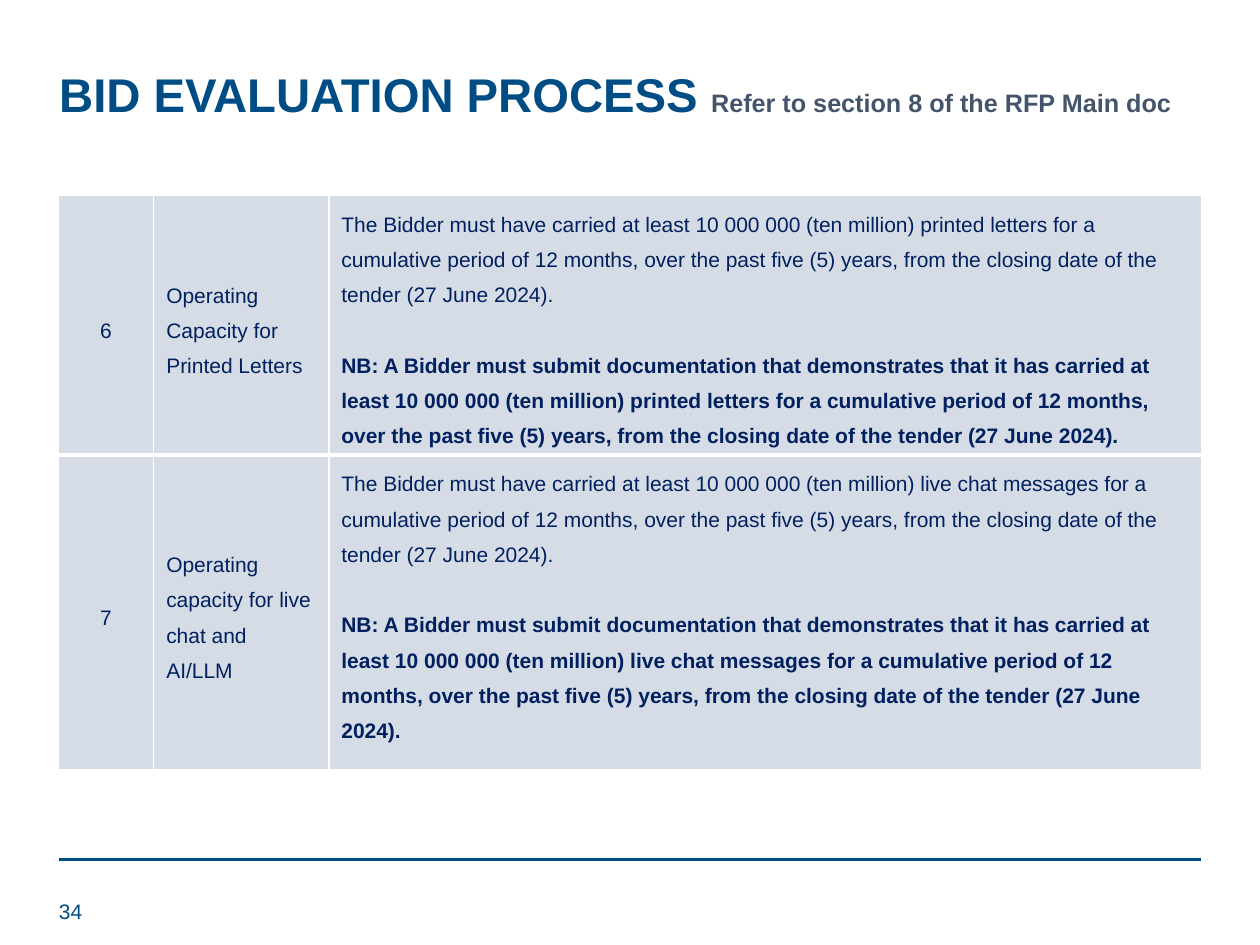
from dataclasses import dataclass

from lxml import etree
from pptx import Presentation
from pptx.dml.color import RGBColor
from pptx.enum.shapes import MSO_CONNECTOR
from pptx.enum.text import MSO_ANCHOR, PP_ALIGN
from pptx.oxml.ns import qn
from pptx.util import Inches, Pt

LEFT, CENTER = PP_ALIGN.LEFT, PP_ALIGN.CENTER
TOP, MIDDLE = MSO_ANCHOR.TOP, MSO_ANCHOR.MIDDLE
STRAIGHT = MSO_CONNECTOR.STRAIGHT
TITLE_ONLY = 5


@dataclass(frozen=True)
class Theme:
    font: str = "Arial"
    brand: str = "004C85"
    note: str = "44546A"
    ink: str = "002060"
    cell: str = "D6DCE5"
    edge: str = "FFFFFF"
    head: float = 27
    sub: float = 14.4
    body: float = 12


THEME = Theme()
COLS = (0.76, 1.39, 6.93)
ROWS = (2.06, 2.5)
LINES = 1.5
GAP = Pt(20.1)  # one body line between the rule and its note

ITEMS = (
    ("6", "Operating Capacity for Printed Letters", "printed letters"),
    ("7", "Operating capacity for live chat and AI/LLM", "live chat messages"),
)
TERMS = ("at least 10 000 000 (ten million) {} for a cumulative period of "
         "12 months, over the past five (5) years, from the closing date of "
         "the tender (27 June 2024).")
RULE = "The Bidder must have carried " + TERMS
PROOF = ("NB: A Bidder must submit documentation that demonstrates that it "
         "has carried " + TERMS)


def style(font, size, color, bold=False):
    font.name, font.size, font.bold = THEME.font, Pt(size), bold
    font.color.rgb = RGBColor.from_string(color)


def add_title(slide, box, head, sub):
    title = slide.shapes.title
    title.left, title.top, title.width, title.height = box
    frame = title.text_frame
    frame.vertical_anchor = MIDDLE
    line = frame.paragraphs[0]
    line.alignment, line.line_spacing = LEFT, 0.9
    for text, size, color in ((head, THEME.head, THEME.brand),
                              (sub, THEME.sub, THEME.note)):
        run = line.add_run()
        run.text = text
        style(run.font, size, color, True)


def set_edges(cell, base):
    props = cell._tc.get_or_add_tcPr()
    widths = {"a:lnL": 1, "a:lnR": 1, "a:lnT": 1, "a:lnB": base}
    for spot, (tag, width) in enumerate(widths.items()):
        edge = etree.Element(qn(tag), w=str(Pt(width)))
        fill = etree.SubElement(edge, qn("a:solidFill"))
        etree.SubElement(fill, qn("a:srgbClr"), val=THEME.edge)
        props.insert(spot, edge)


def fill_cell(cell, texts, align, anchor, base):
    """Write the texts as paragraphs, each after the first one bold."""
    cell.fill.solid()
    cell.fill.fore_color.rgb = RGBColor.from_string(THEME.cell)
    cell.vertical_anchor = anchor
    frame = cell.text_frame
    for spot, text in enumerate(texts):
        line = frame.add_paragraph() if spot else frame.paragraphs[0]
        line.text = text
        line.alignment, line.line_spacing = align, LINES
        if spot:
            line.space_before = GAP
        style(line.font, THEME.body, THEME.ink, spot > 0)
    set_edges(cell, base)


def add_grid(slide, box, items):
    left, top, width, height = box
    table = slide.shapes.add_table(len(items), len(COLS), *box).table
    table.first_row = table.horz_banding = False
    for col, share in zip(table.columns, COLS):
        col.width = int(width * share / sum(COLS))
    for row, share in zip(table.rows, ROWS):
        row.height = int(height * share / sum(ROWS))
    for spot, (number, name, goods) in enumerate(items):
        base = 3 if spot == 0 else 1
        num, label, terms = table.rows[spot].cells
        fill_cell(num, [number], CENTER, MIDDLE, base)
        fill_cell(label, [name], LEFT, MIDDLE, base)
        fill_cell(terms, [RULE.format(goods), PROOF.format(goods)],
                  LEFT, TOP, base)


def add_foot(slide, box, number):
    """Draw a line along the top of the box, with the page number below."""
    left, top, width, height = box
    rule = slide.shapes.add_connector(STRAIGHT, left, top, left + width, top)
    rule.line.width = Pt(2)
    rule.line.color.rgb = RGBColor.from_string(THEME.brand)
    etree.SubElement(rule._element.spPr, qn("a:effectLst"))
    tall = Inches(0.4)
    page = slide.shapes.add_textbox(left - Inches(0.1), top + height - tall,
                                    Inches(0.46), tall)
    frame = page.text_frame
    frame.word_wrap, frame.vertical_anchor = True, MIDDLE
    line = frame.paragraphs[0]
    line.text = number
    style(line.font, THEME.body, THEME.brand)


def main():
    deck = Presentation()
    deck.slide_width, deck.slide_height = Inches(10), Inches(7.5)
    slide = deck.slides.add_slide(deck.slide_layouts[TITLE_ONLY])

    def place(*box):
        return [Inches(part) for part in box]

    add_title(slide, place(0.37, 0.48, 9.31, 0.58), "BID EVALUATION PROCESS ",
              "Refer to section 8 of the RFP Main doc")
    add_grid(slide, place(0.46, 1.55, sum(COLS), sum(ROWS)), ITEMS)
    add_foot(slide, place(0.47, 6.82, 9.06, 0.61), "34")
    deck.save("out.pptx")


if __name__ == "__main__":
    main()
